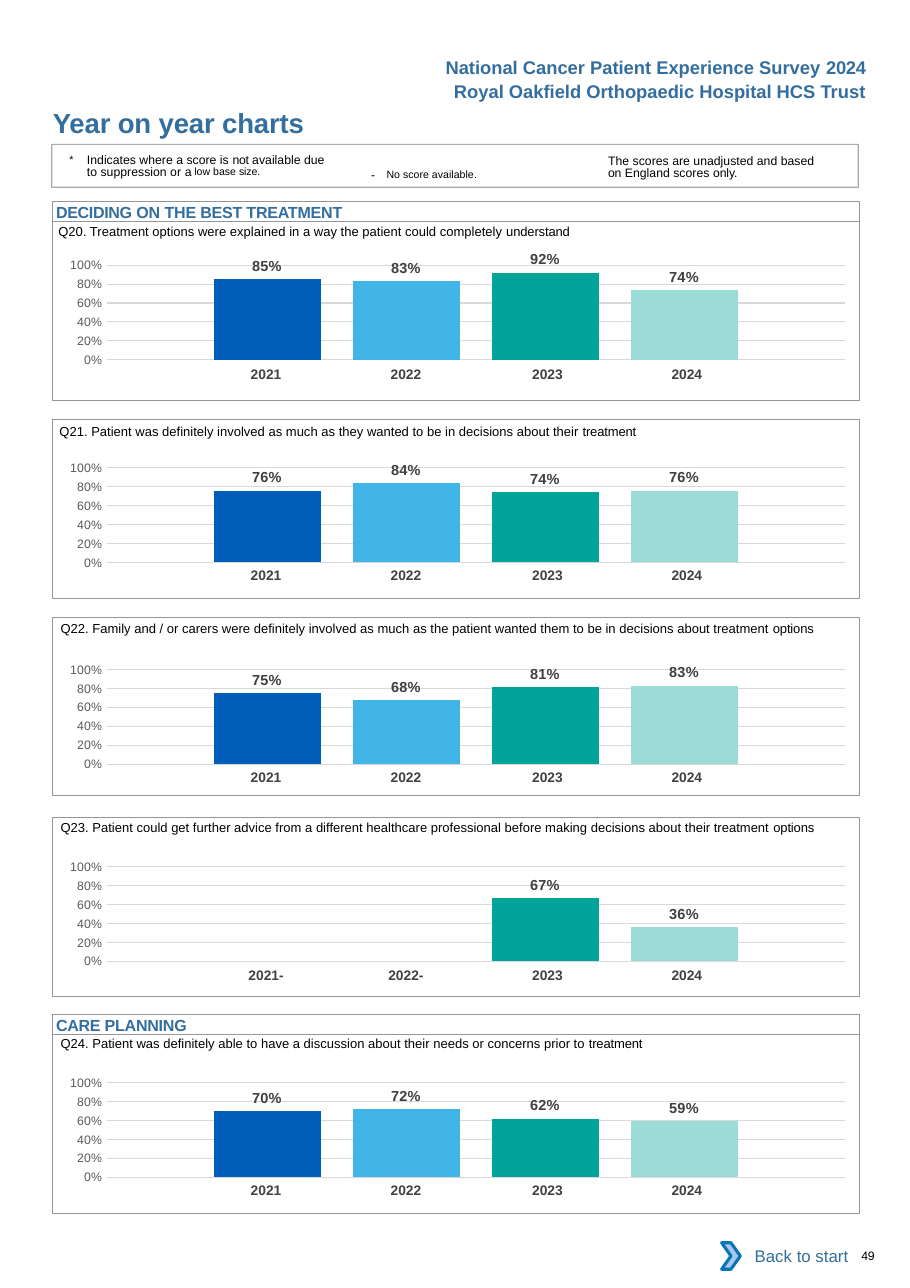
from dataclasses import dataclass
from typing import Optional

from lxml.etree import SubElement
from pptx import Presentation
from pptx.chart.data import CategoryChartData
from pptx.dml.color import RGBColor
from pptx.enum.chart import XL_CHART_TYPE as ChartType, XL_LABEL_POSITION as LabelPosition
from pptx.enum.chart import XL_TICK_MARK as TickMark
from pptx.enum.shapes import MSO_SHAPE as Preset
from pptx.enum.text import MSO_ANCHOR as Anchor, PP_ALIGN as Align
from pptx.oxml import parse_xml
from pptx.oxml.ns import nsdecls, qn
from pptx.util import Inches, Pt


@dataclass(frozen=True)
class Theme:
    font: str = "Arial"
    chart_font: str = "Calibri"
    heading: str = "336E9F"
    ink: str = "000000"
    white: str = "FFFFFF"
    border: str = "939598"
    year: str = "414042"
    value: str = "404040"
    axis: str = "595959"
    grid: str = "D9D9D9"
    chevron: str = "A8C7E9"
    chevron_line: str = "0A74BB"
    bars: tuple = ("005EB8", "41B6E6", "00A499", "9CDCD7")
    title_size: float = 18
    header_size: float = 12
    link_size: float = 11
    section_size: float = 10.5
    chart_size: float = 10
    value_size: float = 9.5
    year_size: float = 9
    question_size: float = 8.5
    note_size: float = 8
    raised_size: float = 12


@dataclass(frozen=True)
class Run:
    text: str
    spacing: float = 0
    size: Optional[float] = None
    raised: int = 0


@dataclass(frozen=True)
class Question:
    top: float
    text_box: tuple
    chart_top: float
    years_top: float
    runs: tuple
    scores: tuple
    years: tuple = ("2021", "2022", "2023", "2024")


class SlideBuilder:
    def __init__(self, slide, theme):
        self.slide = slide
        self.theme = theme

    def add_runs(self, frame, runs, size, color, bold=False, align=Align.LEFT,
                 insets=(0, 0, 0, 0), anchor=Anchor.TOP, line_spacing=None, hanging=0):
        frame.word_wrap = True
        frame.vertical_anchor = anchor
        frame.margin_left, frame.margin_top, frame.margin_right, frame.margin_bottom = map(Inches, insets)
        paragraph = frame.paragraphs[0]
        paragraph.alignment = align
        if line_spacing:
            paragraph.line_spacing = Pt(line_spacing)
        if hanging:
            properties = paragraph._p.get_or_add_pPr()
            properties.set("marL", str(Inches(hanging)))
            properties.set("indent", str(-Inches(hanging)))
        for item in runs:
            run = paragraph.add_run()
            run.text = item.text
            self.style(run.font, item.size or size, color, bold)
            properties = run._r.get_or_add_rPr()
            if item.spacing:
                properties.set("spc", str(round(item.spacing * 100)))
            if item.raised:
                properties.set("baseline", str(item.raised * 1000))

    def style(self, font, size, color, bold=False, name=None):
        font.name = name or self.theme.font
        font.size = Pt(size)
        font.bold = bold
        font.color.rgb = RGBColor.from_string(color)

    def text(self, box, runs, size, color, **options):
        shape = self.slide.shapes.add_textbox(*map(Inches, box))
        self.add_runs(shape.text_frame, runs, size, color, **options)

    def shape(self, box, preset=Preset.RECTANGLE, fill=None, line=None, width=0.5, opacity=100):
        shape = self.slide.shapes.add_shape(preset, *map(Inches, box))
        shape.shadow.inherit = False
        if fill:
            shape.fill.solid()
            shape.fill.fore_color.rgb = RGBColor.from_string(fill)
        else:
            shape.fill.background()
        if line:
            shape.line.color.rgb = RGBColor.from_string(line)
            shape.line.width = Pt(width)
            if opacity < 100:
                color = shape.line._ln.find(".//" + qn("a:srgbClr"))
                SubElement(color, qn("a:alpha")).set("val", str(opacity * 1000))
        else:
            shape.line.fill.background()
        return shape

    def section(self, top, runs):
        shape = self.shape((0.48, top, 7.32, 0.18), line=self.theme.border)
        self.add_runs(shape.text_frame, runs, self.theme.section_size, self.theme.heading,
                      bold=True, insets=(0.03, 0.01, 0, 0))

    def years(self, top, labels):
        widths = (1.27, 1.27, 1.34, 1.27)
        right_insets = (0, 0, 0.04, 0.12)
        frame = self.slide.shapes.add_table(1, len(labels), Inches(1.73), Inches(top),
                                            Inches(sum(widths)), Inches(0.27))
        table = frame.table
        table.first_row = table.horz_banding = False
        style = table._tbl.tblPr.find(qn("a:tableStyleId"))
        style.text = "{2D5ABB26-0587-4C30-8999-92F81FD0307C}"
        table.rows[0].height = Inches(0.27)
        for index, (label, width, right) in enumerate(zip(labels, widths, right_insets)):
            table.columns[index].width = Inches(width)
            cell = table.cell(0, index)
            cell.fill.background()
            self.add_runs(cell.text_frame, [Run(label)], self.theme.year_size, self.theme.year,
                          bold=True, align=Align.CENTER)
            cell.margin_left, cell.margin_right = Inches(0.1), Inches(right)
            cell.margin_top = cell.margin_bottom = Inches(0.05)

    def chart(self, top, scores):
        theme = self.theme
        data = CategoryChartData(number_format="0%")
        data.categories = ["1"]
        for number, score in enumerate(scores, 1):
            data.add_series(f"Series {number}", [score])
        chart = self.slide.shapes.add_chart(ChartType.COLUMN_CLUSTERED, Inches(0.39), Inches(top),
                                            Inches(7.32), Inches(1.29), data).chart
        chart.has_title = chart.has_legend = False
        self.style(chart.font, theme.chart_size, theme.ink, name=theme.chart_font)
        chart.category_axis.visible = False
        axis = chart.value_axis
        axis.minimum_scale, axis.maximum_scale, axis.major_unit = 0, 1, 0.2
        axis.major_tick_mark = axis.minor_tick_mark = TickMark.NONE
        axis.format.line.fill.background()
        axis.major_gridlines.format.line.color.rgb = RGBColor.from_string(theme.grid)
        axis.major_gridlines.format.line.width = Pt(0.75)
        axis.tick_labels.number_format = "0%"
        axis.tick_labels.number_format_is_linked = False
        self.style(axis.tick_labels.font, theme.note_size, theme.axis)
        plot = chart.plots[0]
        plot.gap_width, plot.overlap, plot.vary_by_categories = 200, -30, False
        for series, color in zip(plot.series, theme.bars):
            series.format.fill.solid()
            series.format.fill.fore_color.rgb = RGBColor.from_string(color)
            labels = series.data_labels
            labels.show_value = True
            labels.position = LabelPosition.OUTSIDE_END
            labels.number_format, labels.number_format_is_linked = "0%", False
            self.style(labels.font, theme.value_size, theme.value, bold=True)
        area = chart._chartSpace.chart.plotArea
        for existing in area.findall(qn("c:layout")):
            area.remove(existing)
        area.insert(0, parse_xml(
            f'<c:layout {nsdecls("c")}><c:manualLayout><c:layoutTarget val="inner"/>'
            '<c:xMode val="edge"/><c:yMode val="edge"/><c:x val="0.079"/><c:y val="0.145"/>'
            '<c:w val="0.915"/><c:h val="0.666"/></c:manualLayout></c:layout>'))

    def question(self, question):
        self.years(question.years_top, question.years)
        self.chart(question.chart_top, question.scores)
        self.shape((0.48, question.top, 7.32, 1.62), line=self.theme.border)
        self.text(question.text_box, question.runs, self.theme.question_size, self.theme.ink,
                  insets=(0.01, 0.09, 0, 0))


QUESTIONS = (
    Question(2.01, (0.52, 1.94, 7.21, 0.24), 2.22, 3.28,
             (Run("Q20. Treatment options were explained in a way the patient could completely "),
              Run("understand", -0.1)), (0.85, 0.83, 0.92, 0.74)),
    Question(3.81, (0.53, 3.75, 5.87, 0.24), 4.06, 5.11,
             (Run("Q21. Patient was definitely involved as much as they wanted to be in decisions about their "),
              Run("treatment", -0.1)), (0.76, 0.84, 0.74, 0.76)),
    Question(5.6, (0.54, 5.54, 7.24, 0.24), 5.89, 6.94,
             (Run("Q22. Family and / or carers were definitely involved as much as the patient wanted them "
                  "to be in decisions about treatment "), Run("options", -0.1)), (0.75, 0.68, 0.81, 0.83)),
    Question(7.42, (0.54, 7.35, 7.26, 0.24), 7.68, 8.74,
             (Run("Q23. Patient could get further advice from a different healthcare professional before "
                  "making decisions about their treatment "), Run("options", -0.1)),
             (None, None, 0.67, 0.36), ("2021-", "2022-", "2023", "2024")),
    Question(9.39, (0.54, 9.31, 5.72, 0.24), 9.64, 10.69,
             (Run("Q24. Patient was definitely able to have a discussion about their needs or concerns prior to "),
              Run("treatment", -0.1)), (0.7, 0.72, 0.62, 0.59)),
)


def main():
    presentation = Presentation()
    presentation.slide_width, presentation.slide_height = Inches(8.26), Inches(11.69)
    theme = Theme()
    page = SlideBuilder(presentation.slides.add_slide(presentation.slide_layouts[6]), theme)
    header = dict(bold=True, align=Align.RIGHT, insets=(0, 0.05, 0.1, 0.05))
    page.text((3.92, 0.46, 4.04, 0.3), [Run("National Cancer Patient Experience Survey "), Run("2024", -0.2)],
              theme.header_size, theme.heading, **header)
    page.text((3.92, 0.68, 4.04, 0.3), [Run("Royal Oakfield Orthopaedic Hospital HCS Trust")],
              theme.header_size, theme.heading, **header)
    page.text((0.47, 0.96, 4.5, 0.3), [Run("Year on year charts", -0.1)], theme.title_size, theme.heading,
              bold=True, insets=(0.01, 0, 0, 0))
    page.shape((0.47, 1.31, 7.32, 0.39), line=theme.border, width=0.75, opacity=80)
    page.text((0.63, 1.38, 2.4, 0.27),
              [Run("*\t", size=theme.raised_size, raised=3), Run("Indicates where a score is "),
               Run("not ", -0.2), Run("available due to suppression or "), Run("a ", -0.5),
               Run("low base", size=theme.raised_size, raised=7),
               Run(" size.", -0.1, theme.raised_size, 7)],
              theme.note_size, theme.ink, insets=(0, 0.03, 0, 0), line_spacing=8.1, hanging=0.16)
    page.text((3.27, 1.41, 1.83, 0.24),
              [Run("- ", 2.6), Run("No score available", size=theme.raised_size, raised=3),
               Run(".", -0.1, theme.raised_size, 3)],
              theme.note_size, theme.ink, insets=(0.1, 0.05, 0.1, 0.05))
    page.text((5.52, 1.38, 2.01, 0.27),
              [Run("The scores are unadjusted and based"), Run(" on", -0.2), Run(" England scores "),
               Run("only.", -0.1)],
              theme.note_size, theme.ink, insets=(0, 0.03, 0, 0), line_spacing=8.1)
    for question in QUESTIONS:
        page.question(question)
    page.section(1.83, [Run("DECIDING ", -0.2), Run("ON "), Run("THE BEST TREATMENT", -0.1)])
    page.section(9.21, [Run("CARE ", -0.2), Run("PLANNING", -0.1)])
    link = page.shape((6.62, 11.19, 1.18, 0.42), fill=theme.white)
    page.add_runs(link.text_frame, [Run("Back to start")], theme.link_size, theme.heading,
                  align=Align.RIGHT, anchor=Anchor.MIDDLE, insets=(0.1, 0.05, 0.1, 0.05))
    page.shape((6.55, 11.28, 0.17, 0.24), Preset.CHEVRON, theme.chevron, theme.chevron_line, 2)
    page.text((7.72, 11.33, 0.51, 0.13), [Run("49", -0.2)], theme.note_size, theme.ink,
              insets=(0.1, 0, 0, 0))
    presentation.save("out.pptx")


if __name__ == "__main__":
    main()
